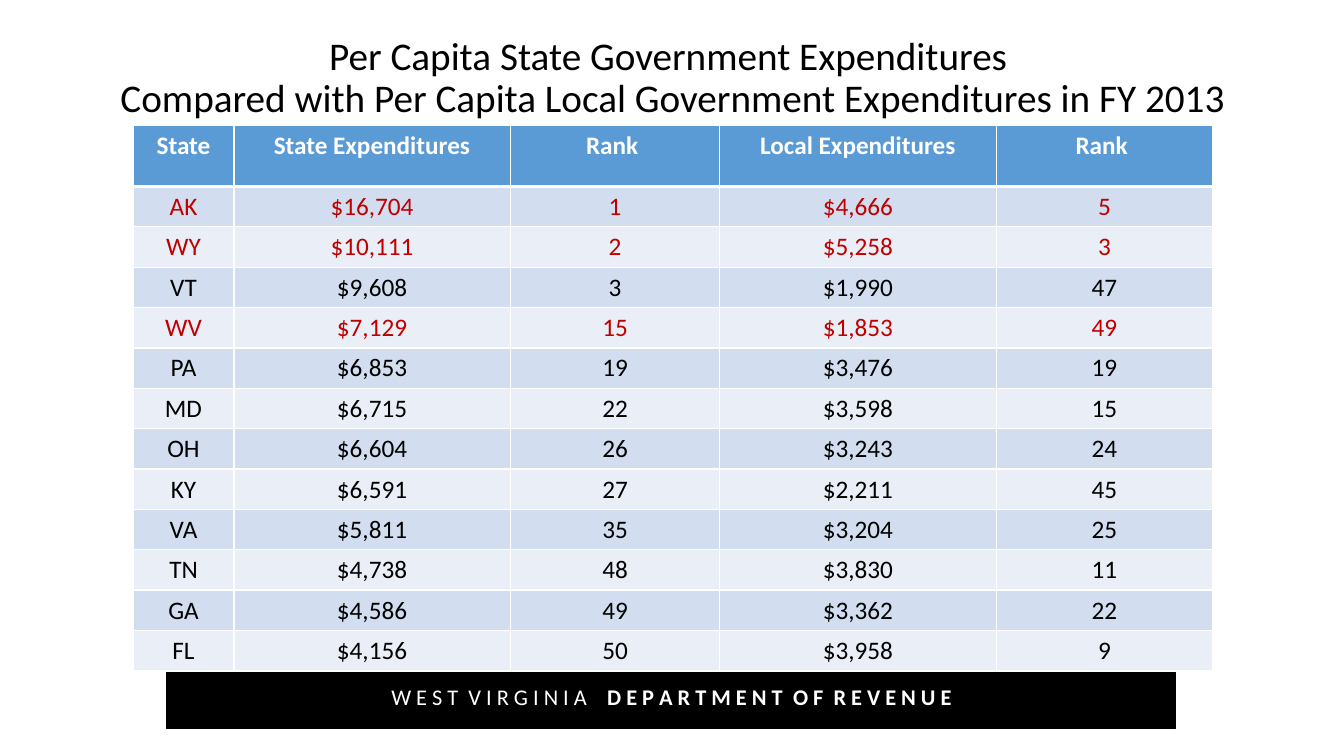
"""Builds a slide comparing per capita state and local government expenditures."""
from pptx import Presentation
from pptx.dml.color import RGBColor
from pptx.enum.shapes import MSO_SHAPE
from pptx.enum.text import MSO_ANCHOR, PP_ALIGN
from pptx.oxml import parse_xml
from pptx.oxml.ns import nsdecls
from pptx.util import Inches, Pt

RECT = MSO_SHAPE.RECTANGLE
CENTER = PP_ALIGN.CENTER
TOP, MIDDLE = MSO_ANCHOR.TOP, MSO_ANCHOR.MIDDLE

TITLE = ["Per Capita State Government Expenditures ",
         "Compared with Per Capita Local Government Expenditures in FY 2013"]
HEADER = ("State", "State Expenditures", "Rank ", "Local Expenditures", "Rank ")
ROWS = [
    ("AK", "$16,704", "1", "$4,666", "5"),
    ("WY", "$10,111", "2", "$5,258", "3"),
    ("VT", "$9,608", "3", "$1,990", "47"),
    ("WV", "$7,129", "15", "$1,853", "49"),
    ("PA", "$6,853", "19", "$3,476", "19"),
    ("MD", "$6,715", "22", "$3,598", "15"),
    ("OH", "$6,604", "26", "$3,243", "24"),
    ("KY", "$6,591", "27", "$2,211", "45"),
    ("VA", "$5,811", "35", "$3,204", "25"),
    ("TN", "$4,738", "48", "$3,830", "11"),
    ("GA", "$4,586", "49", "$3,362", "22"),
    ("FL", "$4,156", "50", "$3,958", "9"),
]
HIGHLIGHTED = {"AK", "WY", "WV"}
PLAIN_WORDS = ["W E S T", "V I R G I N I A"]
BOLD_WORDS = ["D E P A R T M E N T", "O F", "R E V E N U E"]

THEME = {
    "font": "Calibri", "title": 28, "table": 18, "footer": 16,
    "black": "000000", "white": "FFFFFF", "red": "C00000",
    "header": "5B9BD5", "bands": ("D2DEEF", "EAEFF7"),
    "word_gap": 3.6, "name_gap": 10.8,
}
COL_WIDTHS = (1, 2.74, 2.08, 2.74, 2.15)
HEADER_H, ROW_H = 0.61, 0.39


def rgb(name):
    return RGBColor.from_string(THEME.get(name, name))


def add_text(p, text, size, color="black", bold=False, spacing=0):
    """Append a centred, formatted run to a paragraph."""
    p.alignment = CENTER
    r = p.add_run()
    r.text = text
    r.font.name = THEME["font"]
    r.font.size = Pt(THEME[size])
    r.font.bold = bold
    r.font.color.rgb = rgb(color)
    if spacing:
        r.font._element.set("spc", str(round(spacing * 100)))


def add_box(s, left, top, width, height, anchor=TOP):
    box = s.shapes.add_textbox(Inches(left), Inches(top), Inches(width), Inches(height))
    tf = box.text_frame
    tf.word_wrap = True
    tf.vertical_anchor = anchor
    return tf.paragraphs[0]


def set_borders(cell, bottom):
    tcPr = cell._tc.get_or_add_tcPr()
    widths = {"lnL": 1, "lnR": 1, "lnT": 1, "lnB": bottom}
    for i, (tag, width) in enumerate(widths.items()):
        tcPr.insert(i, parse_xml(
            f'<a:{tag} {nsdecls("a")} w="{Pt(width)}"><a:solidFill>'
            f'<a:srgbClr val="{THEME["white"]}"/></a:solidFill></a:{tag}>'))


def add_title(s):
    p = add_box(s, 0.92, 0.22, 11.5, 1.12, MIDDLE)
    p.line_spacing = 0.9
    for i, line in enumerate(TITLE):
        if i:
            p.add_line_break()
        add_text(p, line, "title")


def add_expenditures(s):
    frame = s.shapes.add_table(
        len(ROWS) + 1, len(HEADER), Inches(1.32), Inches(1.24),
        Inches(sum(COL_WIDTHS)), Inches(HEADER_H + ROW_H * len(ROWS)))
    table = frame.table
    for col, width in zip(table.columns, COL_WIDTHS):
        col.width = Inches(width)
    for i, values in enumerate([HEADER] + ROWS):
        is_header = i == 0
        table.rows[i].height = Inches(HEADER_H if is_header else ROW_H)
        fill = "header" if is_header else THEME["bands"][(i - 1) % 2]
        body_color = "red" if values[0] in HIGHLIGHTED else "black"
        color = "white" if is_header else body_color
        for j, value in enumerate(values):
            cell = table.cell(i, j)
            cell.fill.solid()
            cell.fill.fore_color.rgb = rgb(fill)
            set_borders(cell, 3 if is_header else 1)
            add_text(cell.text_frame.paragraphs[0], value, "table",
                     color=color, bold=is_header)


def add_footer(s):
    bar = s.shapes.add_shape(RECT, Inches(1.65), Inches(6.67), Inches(10.01), Inches(0.56))
    bar.shadow.inherit = False
    bar.fill.solid()
    bar.fill.fore_color.rgb = rgb("black")
    bar.line.color.rgb = rgb("black")
    bar.line.width = Pt(1)
    p = add_box(s, 1.66, 6.73, 10, 0.63)
    for words, bold in ((PLAIN_WORDS, False), (BOLD_WORDS, True)):
        if bold:
            add_text(p, " ", "footer", color="white", spacing=THEME["name_gap"])
        for i, word in enumerate(words):
            if i:
                add_text(p, " ", "footer", color="white", bold=bold,
                         spacing=THEME["word_gap"])
            add_text(p, word, "footer", color="white", bold=bold)


def main():
    prs = Presentation()
    prs.slide_width, prs.slide_height = Inches(13.33), Inches(7.5)
    s = prs.slides.add_slide(prs.slide_layouts[6])
    add_title(s)
    add_expenditures(s)
    add_footer(s)
    prs.save("out.pptx")


if __name__ == "__main__":
    main()
